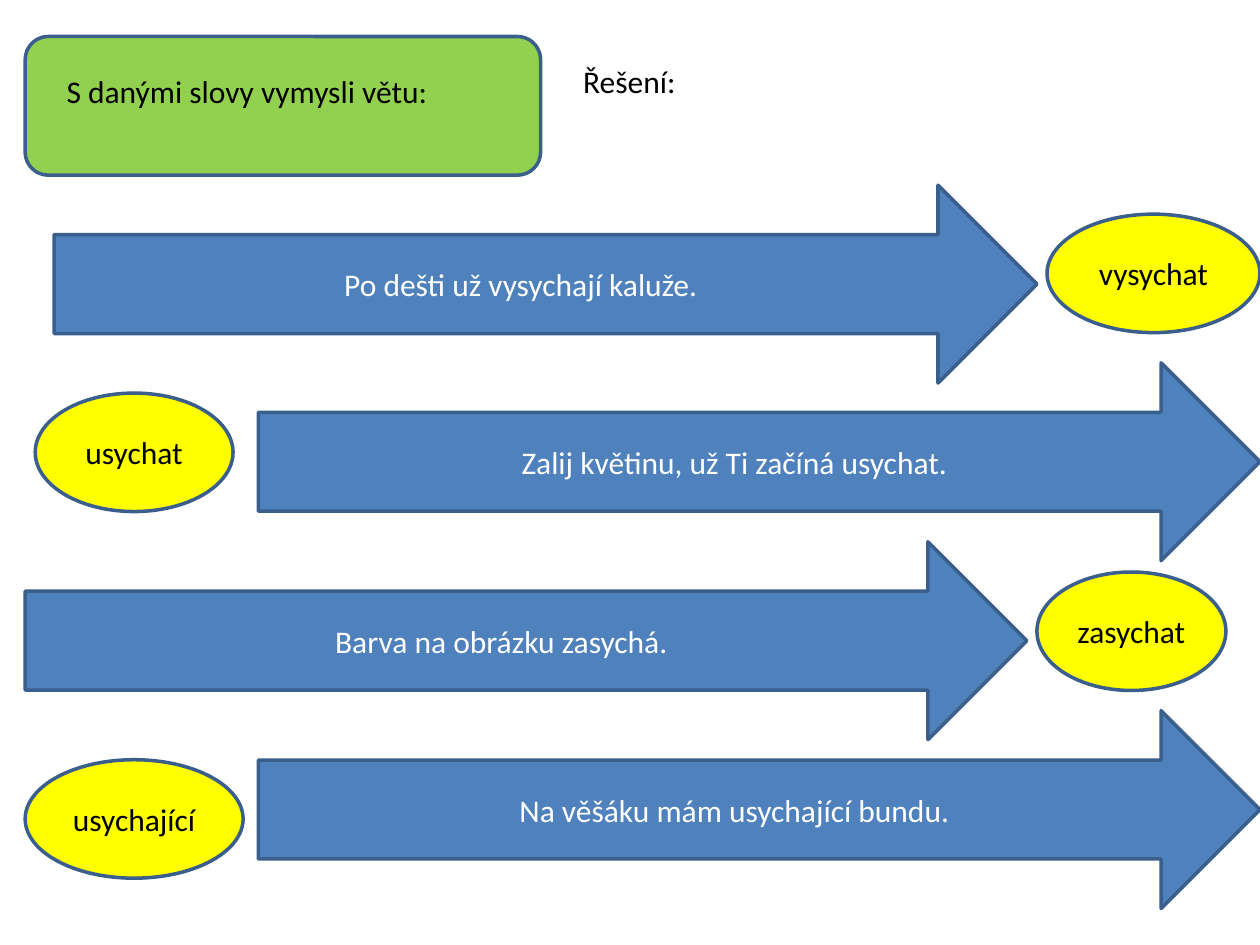
from dataclasses import dataclass

from pptx import Presentation
from pptx.dml.color import RGBColor
from pptx.enum.shapes import MSO_SHAPE
from pptx.enum.text import MSO_ANCHOR, MSO_AUTO_SIZE, PP_ALIGN
from pptx.util import Inches, Pt

ROUNDED = MSO_SHAPE.ROUNDED_RECTANGLE
ARROW = MSO_SHAPE.RIGHT_ARROW
ELLIPSE = MSO_SHAPE.OVAL
CENTER, LEFT = PP_ALIGN.CENTER, PP_ALIGN.LEFT
MIDDLE = MSO_ANCHOR.MIDDLE
GROW = MSO_AUTO_SIZE.SHAPE_TO_FIT_TEXT

GREEN = RGBColor(0x92, 0xD0, 0x50)
BLUE = RGBColor(0x4F, 0x81, 0xBD)
YELLOW = RGBColor(0xFF, 0xFF, 0x00)
OUTLINE = RGBColor(0x3A, 0x5F, 0x8C)
BLACK = RGBColor(0x00, 0x00, 0x00)
WHITE = RGBColor(0xFF, 0xFF, 0xFF)

FONT_FORMAT = {"name": "Calibri", "size": Pt(18)}
ARROW_HEIGHT = 1.57
WORD_HEIGHT = 0.94
LABEL_HEIGHT = 0.4


@dataclass(frozen=True)
class Item:
    """A text with its place; lengths in inches."""
    text: str
    left: float
    top: float
    width: float


SENTENCES = [
    Item("Po dešti už vysychají kaluže.", 0.43, 1.47, 7.8),
    Item("Zalij květinu, už Ti začíná usychat.", 2.05, 2.88, 7.95),
    Item("Barva na obrázku zasychá.", 0.2, 4.3, 7.95),
    Item("Na věšáku mám usychající bundu.", 2.05, 5.64, 7.95),
]
WORDS = [
    Item("vysychat", 8.31, 1.7, 1.69),
    Item("usychající", 0.2, 6.03, 1.73),
    Item("zasychat", 8.23, 4.54, 1.5),
    Item("usychat", 0.28, 3.12, 1.57),
]
LABELS = [
    Item("S danými slovy vymysli větu:", 0.43, 0.52, 3.7),
    Item("Řešení:", 4.53, 0.44, 1.5),
]
HEADING_PANEL = Item("", 0.2, 0.29, 4.09)
PANEL_HEIGHT = 1.1


def write_text(frame, text: str, color: RGBColor, align: PP_ALIGN) -> None:
    frame.word_wrap = True
    paragraph = frame.paragraphs[0]
    paragraph.alignment = align
    run = paragraph.add_run()
    run.text = text
    for attribute, value in FONT_FORMAT.items():
        setattr(run.font, attribute, value)
    run.font.color.rgb = color


def bounds(item: Item, height: float) -> list[Inches]:
    return [Inches(n) for n in (item.left, item.top, item.width, height)]


def draw_shape(slide, kind: MSO_SHAPE, item: Item, height: float,
               fill: RGBColor, text_color: RGBColor) -> None:
    shape = slide.shapes.add_shape(kind, *bounds(item, height))
    shape.shadow.inherit = False
    shape.fill.solid()
    shape.fill.fore_color.rgb = fill
    shape.line.color.rgb = OUTLINE
    shape.line.width = Pt(2)
    if item.text:
        shape.text_frame.vertical_anchor = MIDDLE
        write_text(shape.text_frame, item.text, text_color, CENTER)


def draw_label(slide, item: Item) -> None:
    label = slide.shapes.add_textbox(*bounds(item, LABEL_HEIGHT))
    write_text(label.text_frame, item.text, BLACK, LEFT)
    label.text_frame.auto_size = GROW


def main() -> None:
    deck = Presentation()
    deck.slide_width, deck.slide_height = Inches(10), Inches(7.5)
    slide = deck.slides.add_slide(deck.slide_layouts[6])

    # Panel behind the task heading
    draw_shape(slide, ROUNDED, HEADING_PANEL, PANEL_HEIGHT, GREEN, BLACK)

    # Example sentences in arrows
    for sentence in SENTENCES:
        draw_shape(slide, ARROW, sentence, ARROW_HEIGHT, BLUE, WHITE)

    # Given words in ellipses
    for word in WORDS:
        draw_shape(slide, ELLIPSE, word, WORD_HEIGHT, YELLOW, BLACK)

    # Task and solution labels
    for label in LABELS:
        draw_label(slide, label)

    deck.save("out.pptx")


if __name__ == "__main__":
    main()
